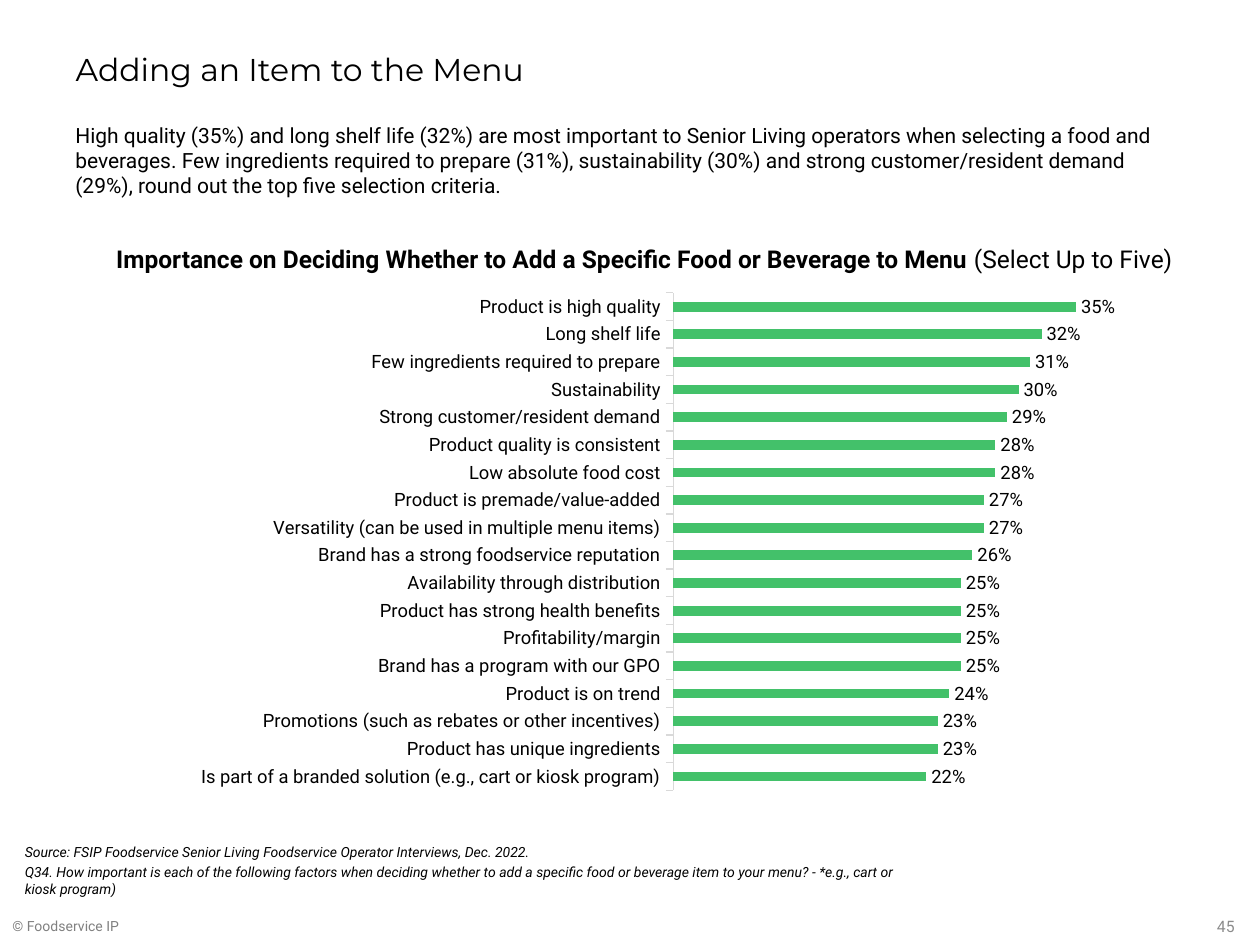
from dataclasses import dataclass

from lxml import etree
from pptx import Presentation
from pptx.chart.data import CategoryChartData
from pptx.dml.color import RGBColor
from pptx.enum.chart import XL_CHART_TYPE, XL_LABEL_POSITION, XL_TICK_MARK
from pptx.enum.text import MSO_ANCHOR, MSO_AUTO_SIZE, PP_ALIGN
from pptx.oxml.ns import qn
from pptx.util import Cm, Pt

BAR_CLUSTERED = XL_CHART_TYPE.BAR_CLUSTERED
OUTSIDE_END = XL_LABEL_POSITION.OUTSIDE_END
TICK_OUTSIDE = XL_TICK_MARK.OUTSIDE
TOP, MIDDLE, BOTTOM = MSO_ANCHOR.TOP, MSO_ANCHOR.MIDDLE, MSO_ANCHOR.BOTTOM
LEFT, CENTER, RIGHT = PP_ALIGN.LEFT, PP_ALIGN.CENTER, PP_ALIGN.RIGHT

COLORS = {
    "text": "000000",
    "footer": "808080",
    "page_number": "8C8C8C",
    "bar": "43C16A",
    "axis": "D9D9D9",
}

IMPORTANCE = {
    "Product is high quality": 0.35,
    "Long shelf life": 0.32,
    "Few ingredients required to prepare": 0.31,
    "Sustainability": 0.30,
    "Strong customer/resident demand": 0.29,
    "Product quality is consistent": 0.28,
    "Low absolute food cost": 0.28,
    "Product is premade/value-added": 0.27,
    "Versatility (can be used in multiple menu items)": 0.27,
    "Brand has a strong foodservice reputation": 0.26,
    "Availability through distribution": 0.25,
    "Product has strong health benefits": 0.25,
    "Profitability/margin": 0.25,
    "Brand has a program with our GPO": 0.25,
    "Product is on trend": 0.24,
    "Promotions (such as rebates or other incentives)": 0.23,
    "Product has unique ingredients": 0.23,
    "Is part of a branded solution (e.g., cart or kiosk program)": 0.22,
}
PLOT_AREA = {"x": 0.473, "y": 0, "w": 0.238, "h": 0.836}


@dataclass
class Span:
    text: str
    bold: bool = False


@dataclass
class TextBlock:
    area: tuple[float, float, float, float]
    paragraphs: list[list[Span]]
    size: float
    color: str = "text"
    font: str = "Roboto"
    anchor: MSO_ANCHOR = TOP
    align: PP_ALIGN = LEFT
    italic: bool = False


TITLE = TextBlock(
    (1.27, 0.76, 22.86, 1.24), [[Span("Adding an Item to the Menu")]],
    18, font="Montserrat", anchor=MIDDLE,
)
TEXT_BLOCKS = [
    TextBlock((0, 17.96, 5.84, 0.99), [[Span("© Foodservice IP")]],
              8, color="footer", anchor=BOTTOM),
    TextBlock(
        (1.27, 2.34, 22.86, 14.73),
        [[Span("High quality (35%) and long shelf life (32%) are most important to Senior "
               "Living operators when selecting a food and beverages. Few ingredients "
               "required to prepare (31%), sustainability (30%) and strong "
               "customer/resident demand (29%), round out the top five selection criteria.")]],
        12,
    ),
    TextBlock((18.21, 18.16, 6.93, 1.02), [[Span("45")]],
              9, color="page_number", anchor=MIDDLE, align=RIGHT),
    TextBlock(
        (0.25, 17.12, 18.14, 1.09),
        [[Span("Source: FSIP Foodservice Senior Living Foodservice Operator Interviews, "
               "Dec. 2022.")],
         [Span("Q34. How important is each of the following factors when deciding whether "
               "to add a specific food or beverage item to your menu? - *e.g., cart or "
               "kiosk program)")]],
        8, anchor=BOTTOM, italic=True,
    ),
    TextBlock(
        (1.19, 4.8, 23.6, 0.86),
        [[Span("Importance on Deciding Whether to Add a Specific Food or Beverage to Menu ",
               bold=True),
          Span("(Select Up to Five)")]],
        14, align=CENTER,
    ),
]


def set_values(target, values: dict) -> None:
    for name, value in values.items():
        setattr(target, name, value)


def color_of(name: str) -> RGBColor:
    return RGBColor.from_string(COLORS[name])


def format_font(font, values: dict, color: str) -> None:
    set_values(font, values)
    font.color.rgb = color_of(color)


def fill_text(box, block: TextBlock) -> None:
    edges = dict(zip(("left", "top", "width", "height"), map(Cm, block.area)))
    set_values(box, edges)
    frame = box.text_frame
    set_values(frame, {"word_wrap": True, "auto_size": MSO_AUTO_SIZE.NONE,
                       "vertical_anchor": block.anchor})
    for index, spans in enumerate(block.paragraphs):
        para = frame.add_paragraph() if index else frame.paragraphs[0]
        set_values(para, {"alignment": block.align,
                          "space_before": Pt(block.size * 0.2 if index else 0)})
        for span in spans:
            run = para.add_run()
            run.text = span.text
            values = {"name": block.font, "size": Pt(block.size),
                      "bold": span.bold, "italic": block.italic}
            format_font(run.font, values, block.color)


def place_plot(chart) -> None:
    plot_area = chart.plots[0]._element.getparent()
    layout = plot_area.find(qn("c:layout"))
    if layout is None:
        layout = etree.Element(qn("c:layout"))
        plot_area.insert(0, layout)
    manual = etree.SubElement(layout, qn("c:manualLayout"))
    settings = {"layoutTarget": "inner", "xMode": "edge", "yMode": "edge", **PLOT_AREA}
    for name, value in settings.items():
        etree.SubElement(manual, qn(f"c:{name}")).set("val", str(value))


def add_importance_chart(page) -> None:
    data = CategoryChartData(number_format="0%")
    data.categories = list(IMPORTANCE)
    data.add_series("Series 1", list(IMPORTANCE.values()))
    area = map(Cm, (-4.88, 5.89, 39.01, 12.01))
    chart = page.shapes.add_chart(BAR_CLUSTERED, *area, data).chart
    set_values(chart, {"has_legend": False, "has_title": False})
    font_values = {"name": "Roboto", "size": Pt(10.5), "bold": False}
    format_font(chart.font, font_values, "text")

    categories = chart.category_axis
    set_values(categories, {"reverse_order": True, "major_tick_mark": TICK_OUTSIDE,
                            "has_major_gridlines": False})
    categories.format.line.width = Pt(0.75)
    categories.format.line.color.rgb = color_of("axis")
    format_font(categories.tick_labels.font, font_values, "text")
    set_values(chart.value_axis, {"visible": False, "has_major_gridlines": False,
                                  "minimum_scale": 0, "maximum_scale": 0.4})

    plot = chart.plots[0]
    set_values(plot, {"gap_width": 182, "vary_by_categories": False,
                      "has_data_labels": True})
    set_values(plot.data_labels, {"show_value": True, "position": OUTSIDE_END,
                                  "number_format": "0%",
                                  "number_format_is_linked": False})
    format_font(plot.data_labels.font, font_values, "text")
    fill = plot.series[0].format.fill
    fill.solid()
    fill.fore_color.rgb = color_of("bar")
    place_plot(chart)


def main() -> None:
    deck = Presentation()
    set_values(deck, {"slide_width": Cm(25.4), "slide_height": Cm(19.05)})
    page = deck.slides.add_slide(deck.slide_layouts[5])
    fill_text(page.shapes.title, TITLE)
    for block in TEXT_BLOCKS:
        fill_text(page.shapes.add_textbox(*map(Cm, block.area)), block)
    add_importance_chart(page)
    deck.save("out.pptx")


if __name__ == "__main__":
    main()
